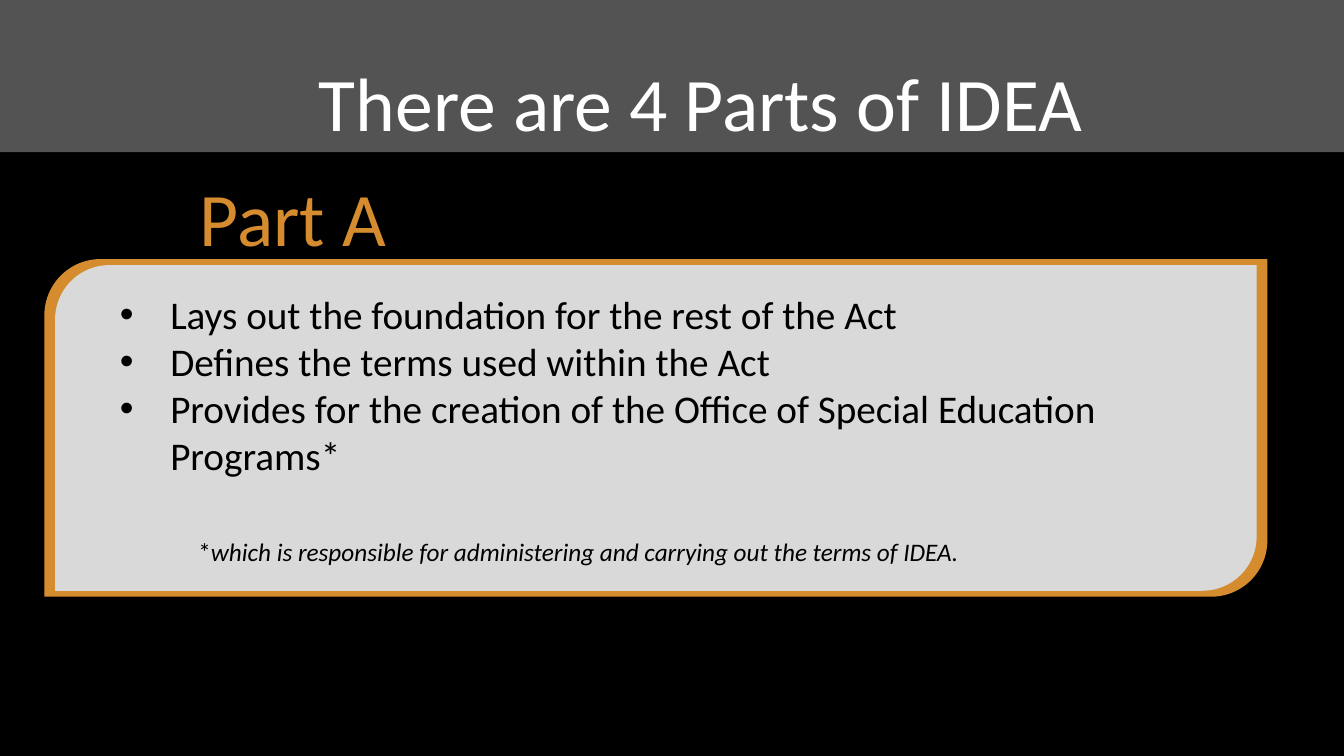
from lxml import etree
from pptx import Presentation
from pptx import util as u
from pptx.dml.color import RGBColor
from pptx.enum import shapes, text
from pptx.oxml.ns import qn

# Content
TITLE = "There are 4 Parts of IDEA"
PART = "Part A"
POINTS = [
    "Lays out the foundation for the rest of the Act",
    "Defines the terms used within the Act",
    "Provides for the creation of the Office of Special Education Programs*",
]
NOTE_MARK = "*"
NOTE = "which is responsible for administering and carrying out the terms of IDEA."

BLACK = RGBColor(0x00, 0x00, 0x00)
WHITE = RGBColor(0xFF, 0xFF, 0xFF)
ORANGE = RGBColor(0xD5, 0x8C, 0x2E)
PANEL_GREY = RGBColor(0xD9, 0xD9, 0xD9)
BAND_GREY = RGBColor(0xA6, 0xA6, 0xA6)
FONT = "Calibri"

# Places in percent of the slide: left, top, width, height
FRAME = (3.3, 34.27, 91, 44.67)
BORDER = 0.8
PANEL = (FRAME[0] + BORDER, FRAME[1] + BORDER,
         FRAME[2] - 2 * BORDER, FRAME[3] - 2 * BORDER)
BAND = (0, -32.93, 100, 53.07)
HEADING_HEIGHT = 13.47
INDENT = 14.03
TITLE_AREA = (22.66, 6.8, 58.96, HEADING_HEIGHT)
PART_AREA = (INDENT, 22, 15.53, HEADING_HEIGHT)
POINTS_AREA = (8.18, 37.73, 83.72, 32.8)
NOTE_AREA = (INDENT, 70.27, 75.84, 5.33)

deck = Presentation()
deck.slide_width, deck.slide_height = u.Inches(13.33), u.Inches(7.5)
slide = deck.slides.add_slide(deck.slide_layouts[6])
slide.background.fill.solid()
slide.background.fill.fore_color.rgb = BLACK


def place(area):
    sides = (deck.slide_width, deck.slide_height) * 2
    return [round(share * side / 100) for share, side in zip(area, sides)]


def add_block(kind, area, color):
    block = slide.shapes.add_shape(kind, *place(area))
    block.shadow.inherit = False
    block.fill.solid()
    block.fill.fore_color.rgb = color
    block.line.fill.background()
    return block


def add_bullet(paragraph, indent):
    properties = paragraph._p.get_or_add_pPr()
    properties.set("marL", str(indent))
    properties.set("indent", str(-indent))
    etree.SubElement(properties, qn("a:buFont")).set("typeface", "Arial")
    etree.SubElement(properties, qn("a:buChar")).set("char", "•")


def add_text(area, paragraphs, size, color=BLACK, align=text.PP_ALIGN.LEFT,
             wrap=True, bullets=False):
    """Each paragraph is a list of (words, italic) runs."""
    frame = slide.shapes.add_textbox(*place(area)).text_frame
    frame.word_wrap = wrap
    for index, runs in enumerate(paragraphs):
        paragraph = frame.add_paragraph() if index else frame.paragraphs[0]
        paragraph.alignment = align
        if bullets:
            add_bullet(paragraph, u.Inches(0.5))
        for words, italic in runs:
            run = paragraph.add_run()
            run.text = words
            run.font.name, run.font.size = FONT, u.Pt(size)
            run.font.italic = italic
            run.font.color.rgb = color


# Panel with its orange border
for area, color in ((FRAME, ORANGE), (PANEL, PANEL_GREY)):
    add_block(shapes.MSO_SHAPE.ROUND_2_DIAG_RECTANGLE, area, color)

# Half-transparent title band
band = add_block(shapes.MSO_SHAPE.RECTANGLE, BAND, BAND_GREY)
band_color = band.fill._xPr.find(qn("a:solidFill"))[0]
etree.SubElement(band_color, qn("a:alpha")).set("val", "50000")

# Headings, points and footnote
heading = dict(size=54, align=text.PP_ALIGN.CENTER, wrap=False)
add_text(TITLE_AREA, [[(TITLE, False)]], color=WHITE, **heading)
add_text(POINTS_AREA, [[(point, False)] for point in POINTS], size=28, bullets=True)
add_text(PART_AREA, [[(PART, False)]], color=ORANGE, **heading)
add_text(NOTE_AREA, [[(NOTE_MARK, False), (NOTE, True)]], size=18)

deck.save("out.pptx")
